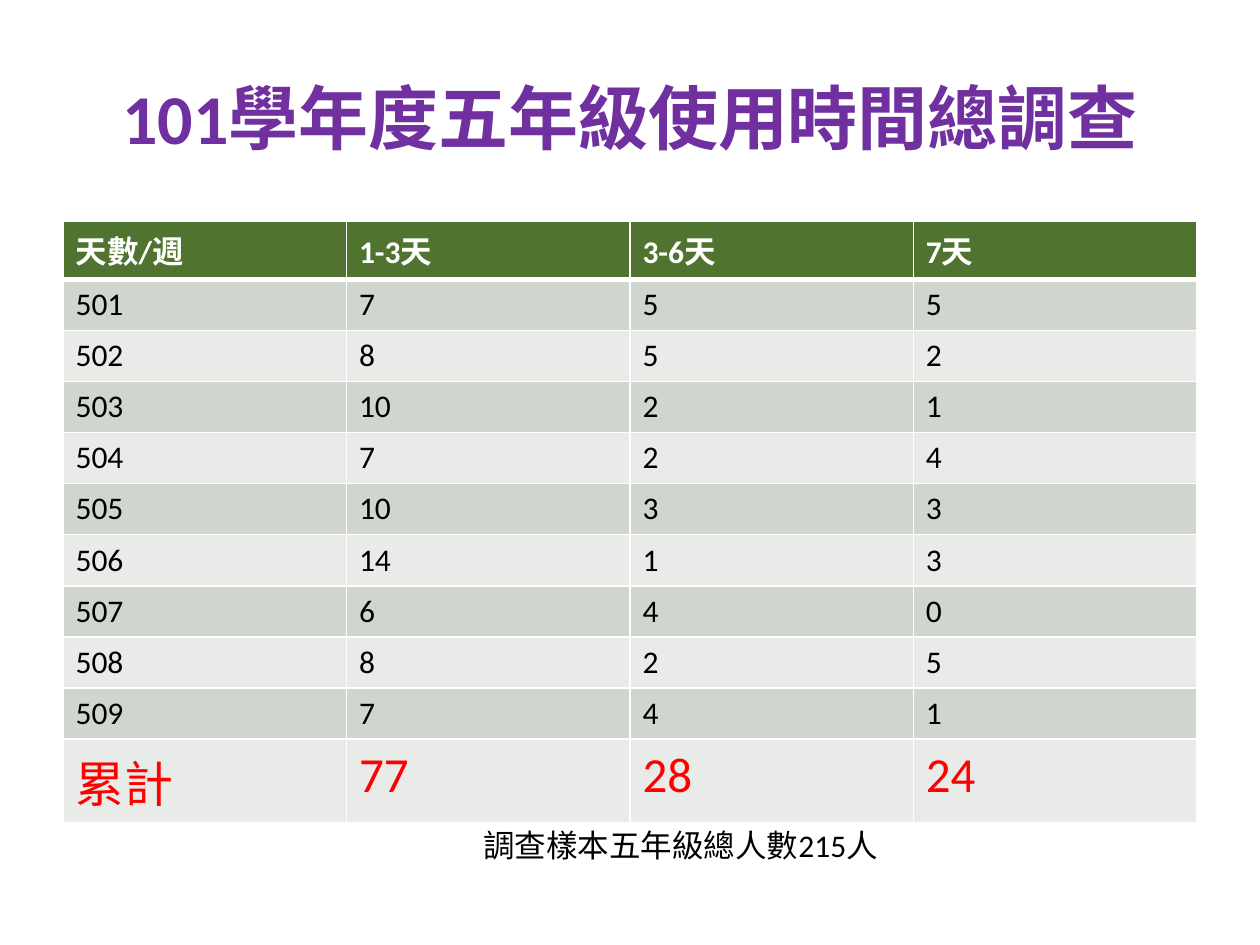
from lxml import etree
from pptx import Presentation
from pptx import util as u
from pptx.dml.color import RGBColor
from pptx.enum import text
from pptx.oxml.ns import qn

SCALE = 914400 // 126  # EMU per px
FONT = "Calibri"
COLORS = {
    "title": "7030A0", "header": "50742F", "odd": "D0D6CD", "even": "E9EBE8",
    "white": "FFFFFF", "black": "000000", "total": "FF0000",
}
HEADER = ["天數/週", "1-3天", "3-6天", "7天"]
CLASSES = [
    (501, 7, 5, 5), (502, 8, 5, 2), (503, 10, 2, 1),
    (504, 7, 2, 4), (505, 10, 3, 3), (506, 14, 1, 3),
    (507, 6, 4, 0), (508, 8, 2, 5), (509, 7, 4, 1),
]
TOTAL = ["累計", 77, 28, 24]


def px(n):
    return u.Emu(n * SCALE)


def box(*lengths):
    return [px(n) for n in lengths]


def rgb(name):
    return RGBColor.from_string(COLORS[name])


def write(tf, content, size, color, bold=False):
    p = tf.paragraphs[0]
    r = p.add_run()
    r.text = str(content)
    for key, value in {"name": FONT, "size": u.Pt(size), "bold": bold}.items():
        setattr(r.font, key, value)
    r.font.color.rgb = rgb(color)
    return p


def add_title(s, content):
    sp = s.shapes.title
    sp.left, sp.top, sp.width, sp.height = box(63, 38, 1134, 157)
    tf = sp.text_frame
    for key, value in {"auto_size": text.MSO_AUTO_SIZE.NONE, "word_wrap": True,
                       "vertical_anchor": text.MSO_ANCHOR.MIDDLE}.items():
        setattr(tf, key, value)
    write(tf, content, 40, "title", True).alignment = text.PP_ALIGN.CENTER


def add_borders(cell, widths):
    """Draw white borders; widths maps side tags to points."""
    pr = cell._tc.get_or_add_tcPr()
    for i, (side, width) in enumerate(widths.items()):
        ln = etree.Element(qn(f"a:{side}"), w=str(u.Pt(width)))
        fill = etree.SubElement(ln, qn("a:solidFill"))
        etree.SubElement(fill, qn("a:srgbClr"), val=COLORS["white"])
        pr.insert(i, ln)


def add_table(s, rows):
    tbl = s.shapes.add_table(len(rows), len(rows[0]),
                             *box(63, 221, 1134, 51 * len(rows))).table
    last = len(rows) - 1
    for i, row in enumerate(rows):
        tbl.rows[i].height = px(51)
        band = "header" if i == 0 else "odd" if i % 2 else "even"
        size, color = (28, "total") if i == last else (18, "black" if i else "white")
        for j, value in enumerate(row):
            cell = tbl.cell(i, j)
            cell.fill.solid()
            cell.fill.fore_color.rgb = rgb(band)
            add_borders(cell, {"lnL": 1, "lnR": 1, "lnT": 3 if i == 1 else 1,
                               "lnB": 1 if i else 3})
            write(cell.text_frame, value, size, color, i == 0)


def add_note(s, content):
    tf = s.shapes.add_textbox(*box(471, 820, 423, 50)).text_frame
    tf.word_wrap = True
    tf.auto_size = text.MSO_AUTO_SIZE.SHAPE_TO_FIT_TEXT
    write(tf, content, 18, "black")


def main():
    prs = Presentation()
    prs.slide_width, prs.slide_height = box(1260, 945)
    s = prs.slides.add_slide(prs.slide_layouts[5])
    add_title(s, "101學年度五年級使用時間總調查")
    # Header, one row per class, then the totals
    add_table(s, [HEADER, *CLASSES, TOTAL])
    add_note(s, "調查樣本五年級總人數215人")
    prs.save("out.pptx")


if __name__ == "__main__":
    main()
